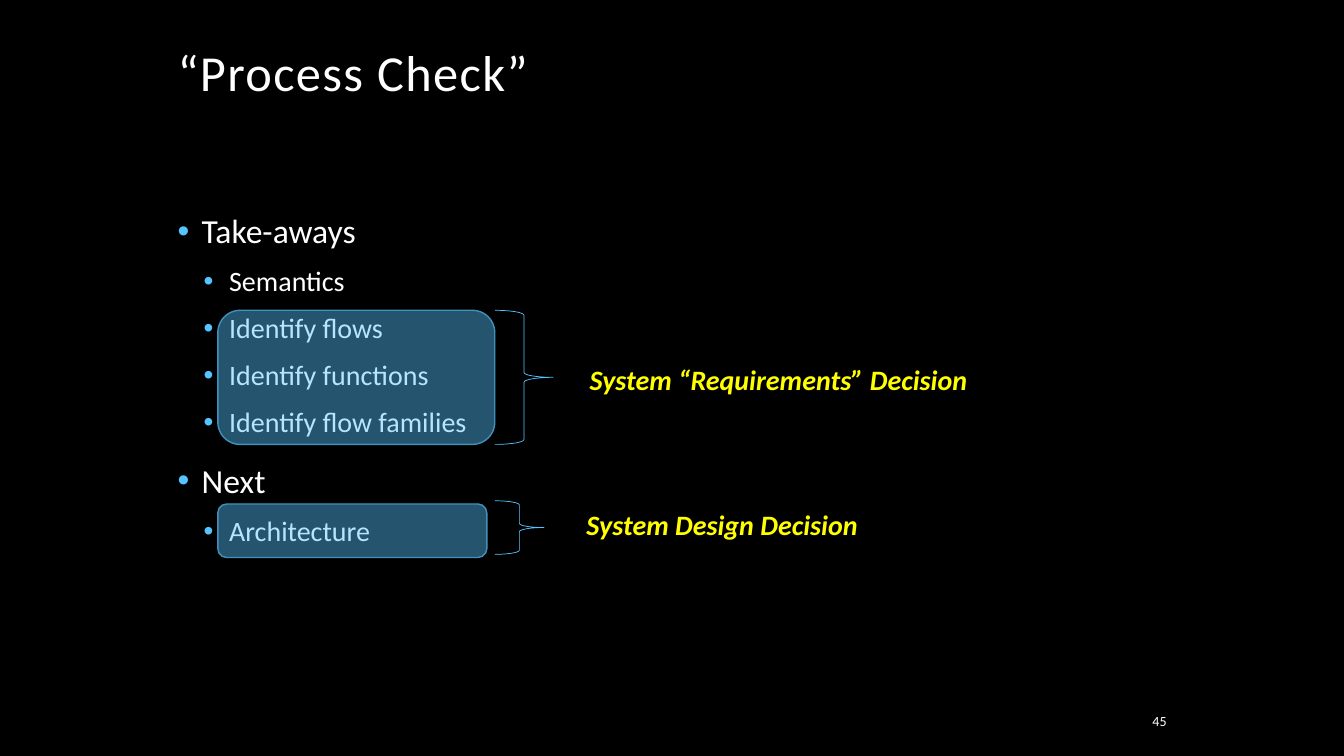
from lxml.etree import SubElement
from pptx import Presentation
from pptx.dml.color import RGBColor
from pptx.enum.shapes import MSO_SHAPE as Shape
from pptx.enum.text import MSO_ANCHOR as Anchor, MSO_AUTO_SIZE as AutoSize, PP_ALIGN as Align
from pptx.oxml.ns import qn
from pptx.util import Cm, Pt

COLORS = {
    "background": "000000",
    "text": "FFFFFF",
    "accent": "56C5FF",
    "outline": "4092BD",
    "decision": "FFFF00",
}

AGENDA = [
    ("Take-aways", 0),
    ("Semantics", 1),
    ("Identify flows", 1),
    ("Identify functions", 1),
    ("Identify flow families", 1),
    ("Next", 0),
    ("Architecture", 1),
]

LEVELS = [
    {"size": 24, "before": 18, "margin": 0.61, "hanging": 0.61},
    {"size": 20, "before": 12, "margin": 1.3, "hanging": 0.64},
]

DECISIONS = [
    {
        "highlight": (5.49, 7.82, 6.98, 3.38),
        "brace": (12.47, 7.82, 1.47, 3.38),
        "caption": (14.61, 9.02, 10.34, 1.12),
        "text": "System “Requirements” Decision",
    },
    {
        "highlight": (5.49, 12.7, 6.78, 1.35),
        "brace": (12.47, 12.62, 1.24, 1.35),
        "caption": (14.53, 12.67, 8.61, 1.12),
        "text": "System Design Decision",
    },
]


def rgb(name):
    return RGBColor.from_string(COLORS[name])


def lengths(box):
    return [Cm(value) for value in box]


class SlideBuilder:
    font_name = "Calibri"

    def __init__(self, presentation):
        self.slide = presentation.slides.add_slide(presentation.slide_layouts[1])
        background = self.slide.background.fill
        background.solid()
        background.fore_color.rgb = rgb("background")

    def style(self, paragraph, size, color="text", emphasis=False):
        font = paragraph.font
        font.name = self.font_name
        font.size = Pt(size)
        font.bold = font.italic = emphasis
        font.color.rgb = rgb(color)

    def place(self, placeholder, box):
        placeholder.left, placeholder.top, placeholder.width, placeholder.height = lengths(box)
        frame = placeholder.text_frame
        frame.word_wrap = True
        frame.auto_size = AutoSize.NONE
        frame.vertical_anchor = Anchor.TOP
        return frame

    def title(self, text, box):
        frame = self.place(self.slide.shapes.title, box)
        frame.text = text
        heading = frame.paragraphs[0]
        heading.alignment = Align.LEFT
        heading.line_spacing = 0.9
        self.style(heading, 36)
        heading._p.get_or_add_pPr().get_or_add_defRPr().set("spc", "100")

    def bullet(self, paragraph, level):
        properties = paragraph._p.get_or_add_pPr()
        properties.set("marL", str(Cm(level["margin"])))
        properties.set("indent", str(-Cm(level["hanging"])))
        color = SubElement(properties, qn("a:buClr"))
        SubElement(color, qn("a:srgbClr"), val=COLORS["accent"])
        SubElement(properties, qn("a:buFont"), typeface="Arial")
        SubElement(properties, qn("a:buChar"), char="•")

    def bullets(self, items, box):
        frame = self.place(self.slide.placeholders[1], box)
        for index, (text, depth) in enumerate(items):
            item = frame.add_paragraph() if index else frame.paragraphs[0]
            level = LEVELS[depth]
            item.text = text
            item.level = depth
            item.alignment = Align.LEFT
            item.line_spacing = 0.9
            item.space_before = Pt(level["before"] if index else 0)
            self.bullet(item, level)
            self.style(item, level["size"])

    def outline(self, shapes, kind, box, color, width):
        shape = shapes.add_shape(kind, *lengths(box))
        shape.shadow.inherit = False
        shape.line.color.rgb = rgb(color)
        shape.line.width = Pt(width)
        return shape

    def label(self, shapes, text, box, size, color="text", emphasis=False,
              align=Align.LEFT, anchor=Anchor.TOP):
        frame = shapes.add_textbox(*lengths(box)).text_frame
        frame.word_wrap = True
        frame.vertical_anchor = anchor
        frame.text = text
        frame.paragraphs[0].alignment = align
        self.style(frame.paragraphs[0], size, color, emphasis)

    def decision(self, highlight, brace, caption, text):
        shapes = self.slide.shapes.add_group_shape().shapes
        bracket = self.outline(shapes, Shape.RIGHT_BRACE, brace, "accent", 0.5)
        bracket.fill.background()
        panel = self.outline(shapes, Shape.ROUNDED_RECTANGLE, highlight, "outline", 1)
        panel.fill.solid()
        panel.fill.fore_color.rgb = rgb("accent")
        tint = panel._element.spPr.find(qn("a:solidFill")).find(qn("a:srgbClr"))
        SubElement(tint, qn("a:alpha"), val="43000")
        self.label(shapes, text, caption, 20, "decision", emphasis=True)


def main():
    presentation = Presentation()
    presentation.slide_width = Cm(33.87)
    presentation.slide_height = Cm(19.05)
    builder = SlideBuilder(presentation)
    builder.title("“Process Check”", (4.22, 1.07, 25.4, 3.81))
    builder.bullets(AGENDA, (4.22, 5.28, 25.37, 11.43))
    for decision in DECISIONS:
        builder.decision(**decision)
    builder.label(builder.slide.shapes, "45", (27.31, 17.78, 2.34, 0.76), 10,
                  align=Align.RIGHT, anchor=Anchor.MIDDLE)
    presentation.save("out.pptx")


if __name__ == "__main__":
    main()
